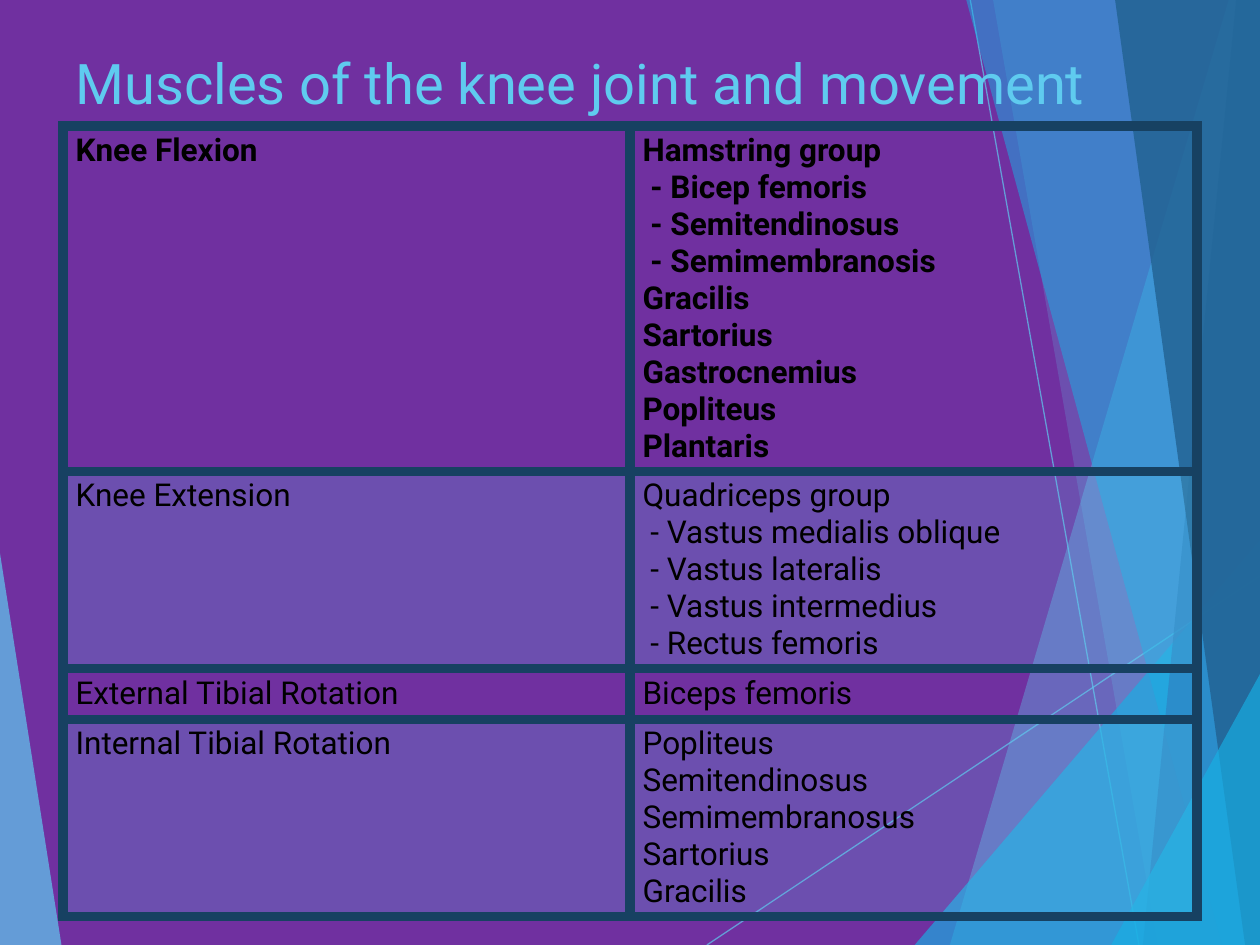
import pptx
import pptx.dml.color
import pptx.enum.shapes
import pptx.enum.text
import pptx.oxml.ns
import pptx.util
from lxml import etree

Cm, Pt, qn = pptx.util.Cm, pptx.util.Pt, pptx.oxml.ns.qn
W, H = 25.4, 19.05
COLORS = {"bg": "7030A0", "sky": "5FCBEF", "cyan": "17B0E4", "blue": "2E83C3",
          "navy": "226292", "border": "174162", "text": "000000"}
LEFT_WEDGE = ([(0, 11.15), (1.24, H), (0, H)], "sky", 70)
RAYS = [((14.25, H), (W, 11.61)), ((19.56, 0), (22.96, H))]
RIGHT_FACETS = [
    ([(24.77, 0), (19.15, H), (W, H), (W, 0)], "sky", 36),
    ([(20.02, 0), (23.34, H), (W, H), (W, 0)], "sky", 20),
    ([(18.44, H), (W, 10.9), (W, H)], "cyan", 66),
    ([(19.48, 0), (24.64, H), (W, H), (W, 0)], "cyan", 50),
    ([(24.92, 0), (23.04, H), (W, H), (W, 0)], "blue", 70),
    ([(22.48, 0), (25.1, H), (W, H), (W, 0)], "navy", 82),
    ([(22.4, H), (W, 13.59), (W, H)], "cyan", 66),
]
MOVEMENTS = [
    ("Knee Flexion", ["Hamstring group", " - Bicep femoris", " - Semitendinosus",
                      " - Semimembranosis", "Gracilis", "Sartorius", "Gastrocnemius",
                      "Popliteus", "Plantaris"]),
    ("Knee Extension", ["Quadriceps group", " - Vastus medialis oblique",
                        " - Vastus lateralis", " - Vastus intermedius",
                        " - Rectus femoris"]),
    ("External Tibial Rotation", ["Biceps femoris"]),
    ("Internal Tibial Rotation", ["Popliteus", "Semitendinosus", "Semimembranosus",
                                  "Sartorius", "Gracilis"]),
]


def rgb(name):
    """Return the named palette colour."""
    return pptx.dml.color.RGBColor.from_string(COLORS[name])


def set_fill(fill, color, alpha, element):
    """Fill with a colour of the given opacity in percent."""
    fill.solid()
    fill.fore_color.rgb = rgb(color)
    clr = element.find(qn("a:solidFill")).find(qn("a:srgbClr"))
    etree.SubElement(clr, qn("a:alpha"), val=str(alpha * 1000))


def set_font(p, **extra):
    """Apply the shared font and any extra values to a paragraph's runs."""
    for r in p.runs:
        for key, value in {"name": "Roboto", **extra}.items():
            if key == "color":
                r.font.color.rgb = rgb(value)
            else:
                setattr(r.font, key, value)


def add_facet(s, points, color, alpha):
    """Add a translucent polygon."""
    start, *rest = [(Cm(x), Cm(y)) for x, y in points]
    builder = s.shapes.build_freeform(*start)
    builder.add_line_segments(rest, close=True)
    sp = builder.convert_to_shape()
    sp.shadow.inherit = False
    sp.line.fill.background()
    set_fill(sp.fill, color, alpha, sp.element.spPr)


def add_ray(s, start, end):
    """Add a thin translucent line."""
    ln = s.shapes.add_connector(pptx.enum.shapes.MSO_CONNECTOR.STRAIGHT,
                                *[Cm(v) for v in start + end])
    ln.line.width = Pt(0.75)
    sp_pr = ln.element.spPr
    set_fill(ln.line.fill, "sky", 70, sp_pr.find(qn("a:ln")))
    etree.SubElement(sp_pr, qn("a:effectLst"))


def add_title(s, text):
    """Place and format the title in front of the background."""
    sp = s.shapes.title
    box = {"left": 1.27, "top": 0.76, "width": 22.86, "height": 1.78}
    for key, value in box.items():
        setattr(sp, key, Cm(value))
    sp.element.getparent().append(sp.element)
    tf = sp.text_frame
    tf.text = text
    tf.vertical_anchor = pptx.enum.text.MSO_ANCHOR.MIDDLE
    p = tf.paragraphs[0]
    p.alignment = pptx.enum.text.PP_ALIGN.LEFT
    set_font(p, size=Pt(32), color="sky")


def format_cell(cell, lines, bold, shaded):
    """Write a cell's lines and set its borders and fill."""
    tf = cell.text_frame
    tf.text = "\n".join(lines)
    for p in tf.paragraphs:
        set_font(p, size=Pt(18), bold=bold, color="text")
    tc_pr = cell._tc.get_or_add_tcPr()
    for side in "LRTB":
        ln = etree.SubElement(tc_pr, qn(f"a:ln{side}"), w=str(Pt(6)))
        fill = etree.SubElement(ln, qn("a:solidFill"))
        etree.SubElement(fill, qn("a:srgbClr"), val=COLORS["border"])
    if shaded:
        set_fill(cell.fill, "sky", 20, tc_pr)
    else:
        cell.fill.background()


def add_table(s, rows):
    """Add the two-column table with rows as high as their lines."""
    heights = [Cm(0.28 + 0.74 * len(muscles)) for _, muscles in rows]
    frame = s.shapes.add_table(len(rows), 2, Cm(1.27), Cm(2.54), Cm(22.86), sum(heights))
    table = frame.table
    for i, (movement, muscles) in enumerate(rows):
        table.rows[i].height = heights[i]
        for j, lines in enumerate(([movement], muscles)):
            format_cell(table.cell(i, j), lines, bold=i == 0, shaded=i % 2 == 1)


def main():
    """Build and save the slide."""
    prs = pptx.Presentation()
    prs.slide_width, prs.slide_height = Cm(W), Cm(H)
    s = prs.slides.add_slide(prs.slide_layouts[5])
    s.background.fill.solid()
    s.background.fill.fore_color.rgb = rgb("bg")
    add_facet(s, *LEFT_WEDGE)
    for ray in RAYS:
        add_ray(s, *ray)
    for facet in RIGHT_FACETS:
        add_facet(s, *facet)
    add_title(s, "Muscles of the knee joint and movement")
    add_table(s, MOVEMENTS)
    prs.save("out.pptx")


if __name__ == "__main__":
    main()
